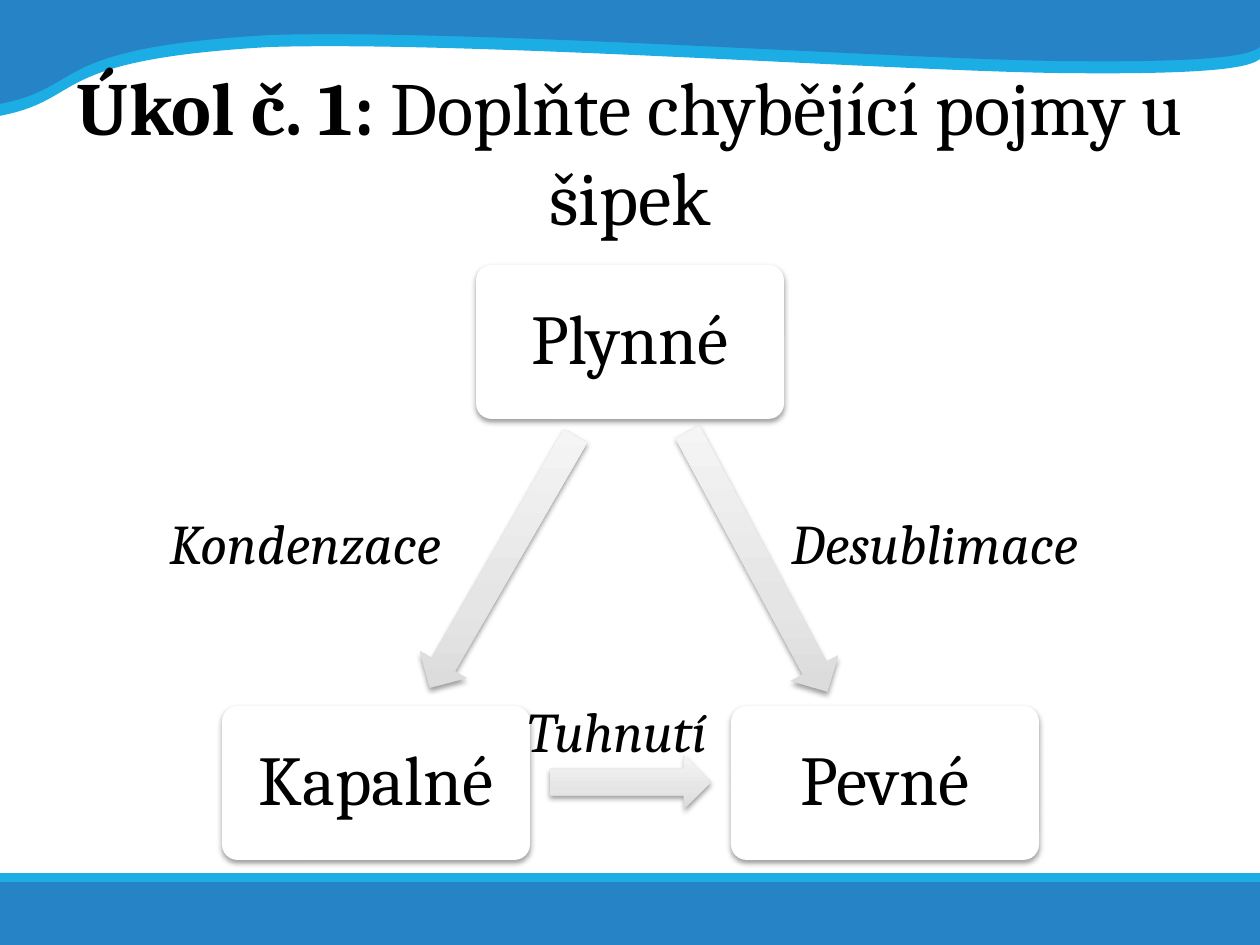
from lxml import etree
from pptx import Presentation
from pptx.dml.color import RGBColor
from pptx.enum.shapes import MSO_SHAPE
from pptx.enum.text import MSO_ANCHOR, MSO_AUTO_SIZE, PP_ALIGN
from pptx.oxml import parse_xml
from pptx.util import Pt

RECT, ROUND, ARROW = MSO_SHAPE.RECTANGLE, MSO_SHAPE.ROUNDED_RECTANGLE, MSO_SHAPE.RIGHT_ARROW
LEFT, MID = PP_ALIGN.LEFT, PP_ALIGN.CENTER
TOP, CENTER = MSO_ANCHOR.TOP, MSO_ANCHOR.MIDDLE
FIXED = MSO_AUTO_SIZE.NONE
NS = "http://schemas.openxmlformats.org/drawingml/2006/main"
SCALE = 914400 / 126
FONT = "Cambria"

COLORS = {"sky": "1CADE4", "blue": "2683C6", "white": "FFFFFF", "black": "000000"}
FADE = [(0, "DADADA"), (35, "E5E5E5"), (100, "F5F5F5")]

TITLE = [("Úkol č. 1: ", True), ("Doplňte chybějící pojmy u šipek", False)]
STATES = [("Plynné", 476, 265), ("Pevné", 731, 706), ("Kapalné", 222, 706)]
BOX = (308, 154)
ARROWS = [(610, 535, 295, 61.7), (550, 755, 161, 0), (357, 535, 291, 120)]
THICK = 54
LABELS = [("Desublimace", 779, 502, 357), ("Kondenzace", 157, 502, 357),
          ("Tuhnutí", 515, 690, 228)]
LABEL_H = 81

START, CORNER = (0, -1), (1260, 0)
CURVES = [[(1260, 15), (1260, 31), (1260, 47)],
          [(1251, 54), (1225, 63), (1060, 61)],
          [(895, 59), (470, 29), (270, 35)],
          [(43, 48), (88, 87), (-1, 104)]]
WAVES = [("sky", 12), ("blue", 0)]
BANDS = [("blue", 882, 63), ("sky", 873, 9)]


def px(num):
    return round(num * SCALE)


def rgb(name):
    return RGBColor.from_string(COLORS[name])


def tag(name):
    return f"{{{NS}}}{name}"


def paint(shape, color):
    shape.fill.solid()
    shape.fill.fore_color.rgb = rgb(color)
    shape.line.fill.background()
    shape.shadow.inherit = False


def block(kind, x, y, w, h, color):
    shape = slide.shapes.add_shape(kind, px(x), px(y), px(w), px(h))
    paint(shape, color)
    return shape


def wave(color, drop):
    knots = [START, CORNER] + [curve[-1] for curve in CURVES]
    pts = [(px(x), px(y + drop)) for x, y in knots]
    pen = slide.shapes.build_freeform(*pts[0])
    pen.add_line_segments(pts[1:], close=True)
    shape = pen.convert_to_shape()
    paint(shape, color)
    sides = list(shape.element.spPr.iter(tag("lnTo")))[1:]
    for side, curve in zip(sides, CURVES):
        bend = etree.Element(tag("cubicBezTo"))
        for x, y in curve:
            etree.SubElement(bend, tag("pt"), x=str(px(x) - shape.left),
                             y=str(px(y + drop) - shape.top))
        side.getparent().replace(side, bend)


def shade(shape):
    effects = shape.element.spPr.find(tag("effectLst"))
    effects.append(parse_xml(
        f'<a:outerShdw xmlns:a="{NS}" blurRad="40000" dist="20000" dir="5400000" '
        f'rotWithShape="0"><a:srgbClr val="{COLORS["black"]}"><a:alpha val="38000"/>'
        '</a:srgbClr></a:outerShdw>'))


def fade(shape):
    props = shape.element.spPr
    grad = etree.Element(tag("gradFill"), rotWithShape="0")
    stops = etree.SubElement(grad, tag("gsLst"))
    for pos, color in FADE:
        stop = etree.SubElement(stops, tag("gs"), pos=str(pos * 1000))
        etree.SubElement(stop, tag("srgbClr"), val=color)
    etree.SubElement(grad, tag("lin"), ang="16200000", scaled="0")
    props.replace(props.find(tag("solidFill")), grad)


def write(shape, runs, size, align=MID, anchor=CENTER, italic=False, space=None):
    frame = shape.text_frame
    frame.word_wrap = True
    frame.auto_size = FIXED
    frame.vertical_anchor = anchor
    para = frame.paragraphs[0]
    para.alignment = align
    para.line_spacing = space
    for text, bold in runs:
        run = para.add_run()
        run.text = text
        font = run.font
        font.name, font.size = FONT, Pt(size)
        font.bold, font.italic = bold, italic
        font.color.rgb = rgb("black")


deck = Presentation()
deck.slide_width, deck.slide_height = px(1260), px(945)
slide = deck.slides.add_slide(deck.slide_layouts[5])

for color, drop in WAVES:
    wave(color, drop)

for color, y, h in BANDS:
    block(RECT, 0, y, 1260, h, color)

for text, x, y in STATES:
    card = block(ROUND, x, y, *BOX, "white")
    card.adjustments[0] = 0.1
    shade(card)
    write(card, [(text, False)], 40, space=0.9)

for x, y, w, turn in ARROWS:
    arrow = block(ARROW, x, y, w, THICK, "white")
    arrow.rotation = turn
    fade(arrow)
    shade(arrow)

for text, x, y, w in LABELS:
    label = slide.shapes.add_textbox(px(x), px(y), px(w), px(LABEL_H))
    write(label, [(text, False)], 32, align=LEFT, anchor=TOP, italic=True)

title = slide.shapes.title
title.left, title.top, title.width, title.height = px(63), px(59), px(1134), px(183)
write(title, TITLE, 42.9, space=1.0)
slide.shapes.element.append(title.element)

deck.save("out.pptx")
